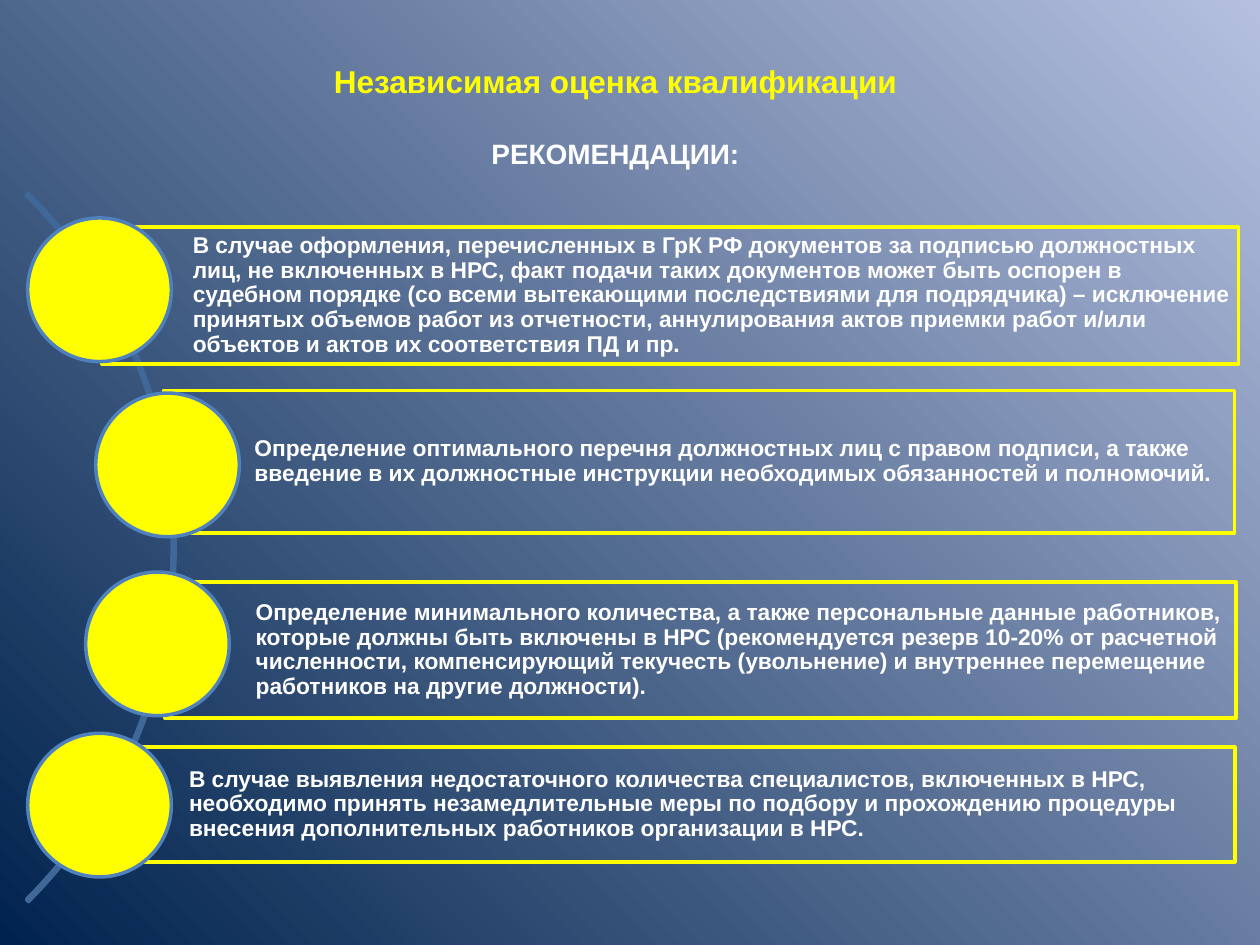
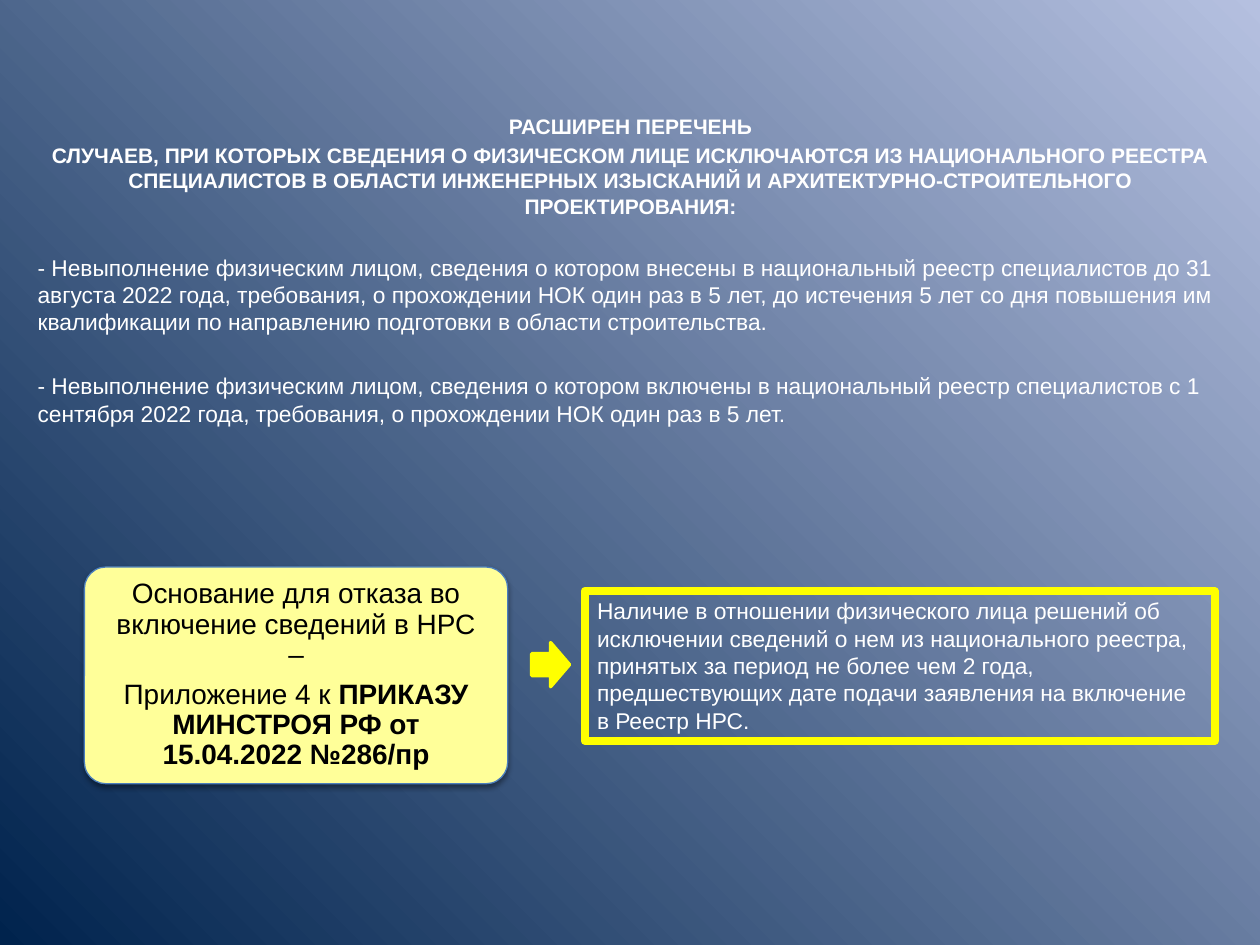
from dataclasses import dataclass, field
from typing import NamedTuple, Optional

from lxml import etree
from pptx import Presentation
from pptx.dml.color import RGBColor
from pptx.enum import shapes, text
from pptx.oxml import ns
from pptx.util import Inches, Pt

SHAPE = shapes.MSO_SHAPE
CENTER, LEFT = text.PP_ALIGN.CENTER, text.PP_ALIGN.LEFT
TOP, MIDDLE = text.MSO_ANCHOR.TOP, text.MSO_ANCHOR.MIDDLE


@dataclass(frozen=True)
class Theme:
    font: str = "Arial"
    white: str = "FFFFFF"
    black: str = "000000"
    yellow: str = "FFFF00"
    cream: str = "FFFF99"
    blue: str = "4F81BD"
    card_line: str = "4B7EBC"
    arc: str = "3F6797"
    sky: str = "B5C0E0"
    night: str = "00234D"
    title: float = 18
    subtitle: float = 16
    body: float = 13
    heading: float = 12


THEME = Theme()


class Box(NamedTuple):
    left: float
    top: float
    width: float
    height: float


class Run(NamedTuple):
    text: str
    bold: bool = False


@dataclass
class Para:
    runs: list[Run]
    size: float = THEME.body
    color: str = THEME.white
    align: text.PP_ALIGN = LEFT
    before: float = 0
    after: float = 0
    spacing: float = 1


@dataclass
class Frame:
    paras: list[Para] = field(default_factory=list)
    anchor: text.MSO_ANCHOR = MIDDLE
    margins: tuple[float, float, float, float] = (0.1, 0.05, 0.1, 0.05)


class Recommendation(NamedTuple):
    panel: Box
    circle_left: float
    circle_top: float
    text: str


CIRCLE = 1.14
RECOMMENDATIONS = [
    Recommendation(
        Box(0.81, 1.8, 9.02, 1.09), 0.22, 1.73,
        "В случае оформления, перечисленных в ГрК РФ документов за подписью должностных лиц, "
        "не включенных в НРС, факт подачи таких документов может быть оспорен в судебном порядке "
        "(со всеми вытекающими последствиями для подрядчика) – исключение принятых объемов работ "
        "из отчетности, аннулирования актов приемки работ и/или объектов и актов их соответствия ПД и пр."),
    Recommendation(
        Box(1.3, 3.1, 8.5, 1.13), 0.76, 3.12,
        "Определение оптимального перечня должностных лиц с правом подписи, а также введение "
        "в их должностные инструкции необходимых обязанностей и полномочий."),
    Recommendation(
        Box(1.31, 4.62, 8.5, 1.08), 0.68, 4.54,
        "Определение минимального количества, а также персональные данные работников, которые "
        "должны быть включены в НРС (рекомендуется резерв 10-20% от расчетной численности, "
        "компенсирующий текучесть (увольнение) и внутреннее перемещение работников на другие должности)."),
    Recommendation(
        Box(0.78, 5.93, 9.02, 0.91), 0.22, 5.82,
        "В случае выявления недостаточного количества специалистов, включенных в НРС, необходимо "
        "принять незамедлительные меры по подбору и прохождению процедуры внесения дополнительных "
        "работников организации в НРС."),
]


def inches(box: Box) -> list[int]:
    return [Inches(v) for v in box]


def write(sp, frame: Frame) -> None:
    tf = sp.text_frame
    tf.word_wrap = True
    tf.vertical_anchor = frame.anchor
    tf.margin_left, tf.margin_top, tf.margin_right, tf.margin_bottom = map(Inches, frame.margins)
    for i, para in enumerate(frame.paras):
        p = tf.paragraphs[0] if i == 0 else tf.add_paragraph()
        p.alignment = para.align
        p.line_spacing = para.spacing
        p.space_before, p.space_after = Pt(para.before), Pt(para.after)
        for run in para.runs:
            r = p.add_run()
            r.text = run.text
            r.font.name = THEME.font
            r.font.size = Pt(para.size)
            r.font.bold = run.bold
            r.font.color.rgb = RGBColor.from_string(para.color)


def add_text(s, box: Box, frame: Frame) -> None:
    write(s.shapes.add_textbox(*inches(box)), frame)


def add_shape(s, kind: SHAPE, box: Box, line: str, width: float,
              fill: Optional[str] = None, frame: Optional[Frame] = None):
    sp = s.shapes.add_shape(kind, *inches(box))
    sp.shadow.inherit = False
    sp.line.color.rgb = RGBColor.from_string(line)
    sp.line.width = Pt(width)
    if fill:
        sp.fill.solid()
        sp.fill.fore_color.rgb = RGBColor.from_string(fill)
    else:
        sp.fill.background()
    if frame:
        write(sp, frame)
    return sp


def add_shadow(sp) -> None:
    effects = sp.element.spPr.find(ns.qn("a:effectLst"))
    shadow = etree.SubElement(effects, ns.qn("a:outerShdw"), blurRad=str(Pt(3.1)),
                              dist=str(Pt(1.6)), dir="5400000", rotWithShape="0")
    color = etree.SubElement(shadow, ns.qn("a:srgbClr"), val=THEME.black)
    etree.SubElement(color, ns.qn("a:alpha"), val="38000")


def set_background(master) -> None:
    fill = master.background.fill
    fill.gradient()
    for stop, color in zip(fill.gradient_stops, (THEME.sky, THEME.night)):
        stop.color.rgb = RGBColor.from_string(color)
    grad = next(master.element.iter(ns.qn("a:gradFill")))
    grad.remove(grad.find(ns.qn("a:lin")))
    circle = etree.SubElement(grad, ns.qn("a:path"), {"path": "circle"})
    etree.SubElement(circle, ns.qn("a:fillToRect"), l="100000", b="100000")


def build_recommendations(s) -> None:
    add_text(s, Box(0.12, 0.44, 9.53, 0.63), Frame([
        Para([Run("Независимая оценка квалификации", True)], THEME.title, THEME.yellow, CENTER),
        Para([Run("РЕКОМЕНДАЦИИ:", True)], THEME.subtitle, align=CENTER, before=21),
    ], TOP))
    arc = add_shape(s, SHAPE.BLOCK_ARC, Box(-6.56, 0.37, 7.95, 7.95), THEME.arc, 2)
    for i, value in enumerate((189, 27, 0.003)):
        arc.adjustments[i] = value
    for item in RECOMMENDATIONS:
        add_shape(s, SHAPE.RECTANGLE, item.panel, THEME.yellow, 2,
                  frame=Frame([Para([Run(item.text, True)], spacing=0.9)],
                              margins=(0.72, 0.04, 0.04, 0.04)))
        add_shape(s, SHAPE.OVAL, Box(item.circle_left, item.circle_top, CIRCLE, CIRCLE),
                  THEME.blue, 2, THEME.yellow)


def build_exclusions(s) -> None:
    add_text(s, Box(0.2, 0.6, 9.61, 6.54), Frame([
        Para([Run("РАСШИРЕН ПЕРЕЧЕНЬ", True)], THEME.heading, align=CENTER),
        Para([Run("СЛУЧАЕВ, ПРИ КОТОРЫХ СВЕДЕНИЯ О ФИЗИЧЕСКОМ ЛИЦЕ ИСКЛЮЧАЮТСЯ ИЗ НАЦИОНАЛЬНОГО "
                  "РЕЕСТРА СПЕЦИАЛИСТОВ В ОБЛАСТИ ИНЖЕНЕРНЫХ ИЗЫСКАНИЙ И "
                  "АРХИТЕКТУРНО-СТРОИТЕЛЬНОГО ПРОЕКТИРОВАНИЯ:", True)],
             THEME.heading, align=CENTER, before=2.4),
        Para([Run("- Невыполнение физическим лицом, сведения о котором внесены в национальный реестр "
                  "специалистов до 31 августа 2022 года, требования, о прохождении НОК один раз в 5 лет, "
                  "до истечения 5 лет со дня повышения им квалификации по направлению подготовки "
                  "в области строительства.")], before=20),
        Para([Run("- Невыполнение физическим лицом, сведения о котором включены в национальный реестр "
                  "специалистов с 1 сентября 2022 года, требования, о прохождении НОК один раз "
                  "в 5 лет.")], before=21),
    ], TOP, (0.1, 0.3, 0.1, 0.05)))

    card_style = dict(size=THEME.subtitle, color=THEME.black, align=CENTER, spacing=0.9)
    card = add_shape(s, SHAPE.ROUNDED_RECTANGLE, Box(0.67, 4.5, 3.36, 1.72),
                     THEME.card_line, 0.75, THEME.cream, Frame([
                         Para([Run("Основание для отказа во включение сведений в НРС –")],
                              after=5.6, **card_style),
                         Para([Run("Приложение 4 к "),
                               Run("ПРИКАЗУ МИНСТРОЯ РФ от 15.04.2022 №286/пр", True)], **card_style),
                     ], margins=(0.12, 0.12, 0.12, 0.12)))
    card.adjustments[0] = 0.1
    add_shadow(card)

    add_shape(s, SHAPE.RECTANGLE, Box(4.64, 4.69, 5, 1.19), THEME.yellow, 4.5, frame=Frame([
        Para([Run("Наличие в отношении физического лица решений об исключении сведений о нем "
                  "из национального реестра, принятых за период не более чем 2 года, предшествующих "
                  "дате подачи заявления на включение в Реестр НРС.")])], TOP))
    add_shape(s, SHAPE.RIGHT_ARROW, Box(4.22, 5.1, 0.3, 0.35), THEME.yellow, 2, THEME.yellow)


def main() -> None:
    prs = Presentation()
    prs.slide_width, prs.slide_height = Inches(10), Inches(7.5)
    set_background(prs.slide_master)
    for build in (build_recommendations, build_exclusions):
        build(prs.slides.add_slide(prs.slide_layouts[6]))
    prs.save("out.pptx")


if __name__ == "__main__":
    main()
